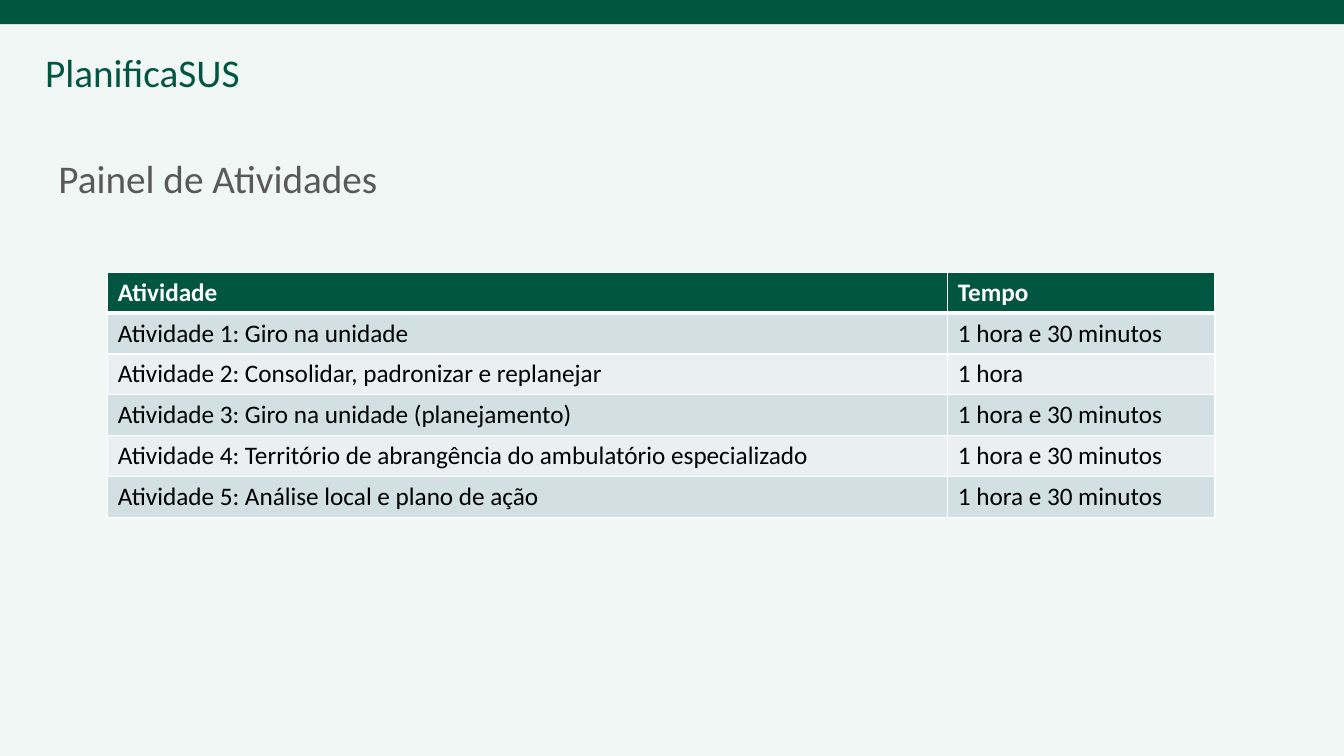
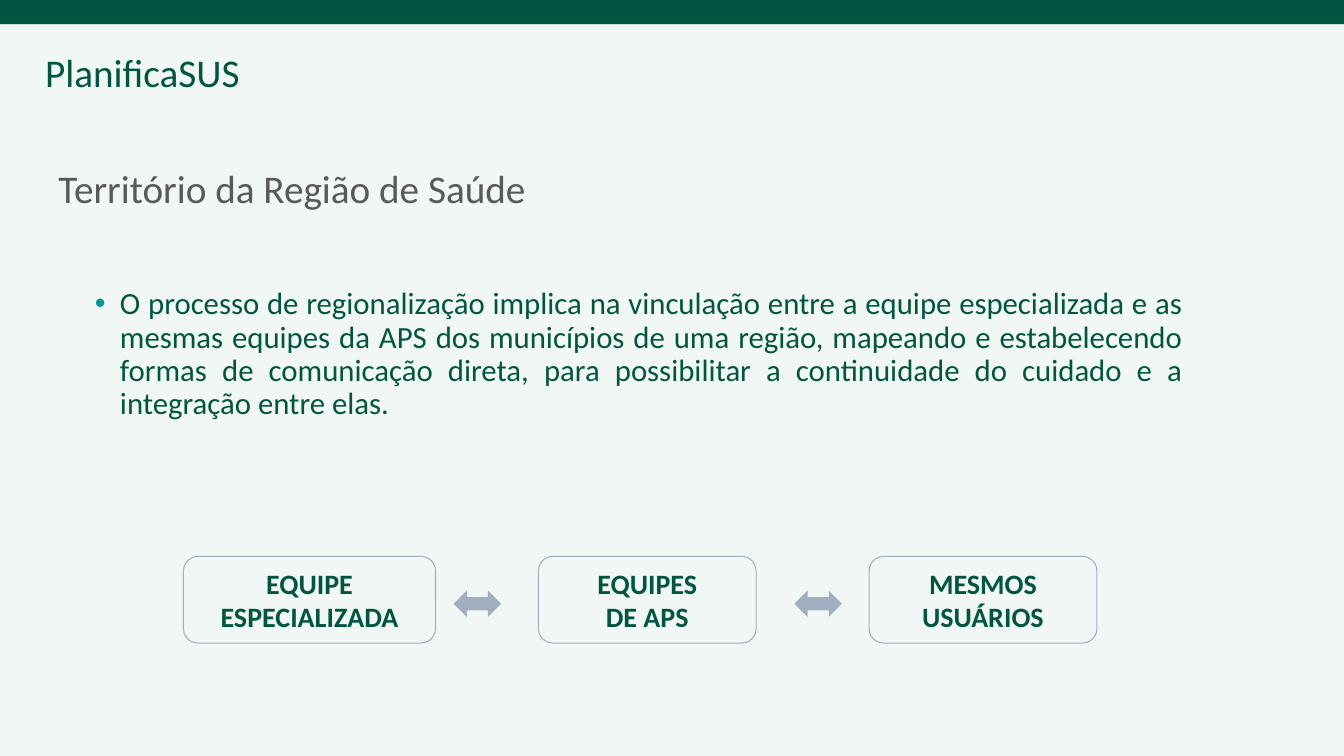
import collections
import dataclasses

import pptx
import pptx.dml.color
import pptx.enum.shapes
import pptx.enum.text
import pptx.oxml
import pptx.oxml.ns
import pptx.util

ALIGN = pptx.enum.text.PP_ALIGN
ANCHOR = pptx.enum.text.MSO_ANCHOR
SHAPE = pptx.enum.shapes.MSO_SHAPE
Box = collections.namedtuple("Box", "left top width height")


@dataclasses.dataclass(frozen=True)
class Theme:
    font: str = "Calibri"
    green: str = "015641"
    grey: str = "595959"
    teal: str = "009999"
    slate: str = "A0AEC0"
    white: str = "FFFFFF"
    black: str = "000000"
    background: str = "F1F7F4"
    row_dark: str = "D2E0E3"
    row_light: str = "EAF0F2"
    title_size: int = 28
    body_size: int = 22
    box_size: int = 20
    table_size: int = 18


THEME = Theme()
SLIDE = Box(0, 0, 13.33, 7.5)


# Helpers
def rgb(value):
    return pptx.dml.color.RGBColor.from_string(value)


def inches(box):
    return [pptx.util.Inches(length) for length in box]


def apply(target, **values):
    for name, value in values.items():
        setattr(target, name, value)


def paint(fill, color):
    fill.solid()
    fill.fore_color.rgb = rgb(color)


def write(paragraph, text, size, color, bold=False, **layout):
    apply(paragraph, **layout)
    run = paragraph.add_run()
    run.text = text
    apply(run.font, name=THEME.font, size=pptx.util.Pt(size), bold=bold)
    run.font.color.rgb = rgb(color)


def place(shape, box):
    apply(shape, **dict(zip(Box._fields, inches(box))))


def add_plain_shape(slide, kind, box, fill=None, line=None):
    shape = slide.shapes.add_shape(kind, *inches(box))
    shape.shadow.inherit = False
    if fill:
        paint(shape.fill, fill)
    else:
        shape.fill.background()
    if line:
        shape.line.color.rgb = rgb(line)
        shape.line.width = pptx.util.Pt(0.75)
    else:
        shape.line.fill.background()
    return shape


# Shared background, band and programme name, kept on the master
def build_master(deck, slide):
    master = deck.slide_master
    paint(master.background.fill, THEME.background)
    band = add_plain_shape(slide, SHAPE.RECTANGLE,
                           Box(SLIDE.left, SLIDE.top, SLIDE.width, 0.24), THEME.green)
    programme = slide.shapes.add_textbox(*inches(Box(0.35, 0.43, 2.15, 0.57)))
    programme.text_frame.word_wrap = False
    write(programme.text_frame.paragraphs[0], "PlanificaSUS", THEME.title_size, THEME.green)
    for number, part in enumerate((band, programme), start=101):
        part._element.nvSpPr.cNvPr.set("id", str(number))
        master.shapes._spTree.append(part._element)


def set_title(slide, text, top, anchor):
    title = slide.shapes.title
    place(title, Box(0.48, top, 10.99, 1.45))
    apply(title.text_frame, vertical_anchor=anchor, word_wrap=True,
          auto_size=pptx.enum.text.MSO_AUTO_SIZE.NONE)
    write(title.text_frame.paragraphs[0], text, THEME.title_size, THEME.grey,
          alignment=ALIGN.LEFT, line_spacing=0.9)


# Activity table
def add_cell_borders(cell, bottom):
    properties = cell._tc.get_or_add_tcPr()
    for side, width in (("L", 1), ("R", 1), ("T", 1), ("B", bottom)):
        properties.append(pptx.oxml.parse_xml(
            f'<a:ln{side} {pptx.oxml.ns.nsdecls("a")} w="{pptx.util.Pt(width)}">'
            f'<a:solidFill><a:srgbClr val="{THEME.white}"/></a:solidFill></a:ln{side}>'))


def add_schedule(slide, box, rows):
    table = slide.shapes.add_table(len(rows), 2, *inches(box)).table
    time_width = 2.65
    for column, width in zip(table.columns, (box.width - time_width, time_width)):
        column.width = pptx.util.Inches(width)
    for index, values in enumerate(rows):
        header = index == 0
        stripe = THEME.row_dark if index % 2 else THEME.row_light
        for cell, text in zip(table.rows[index].cells, values):
            add_cell_borders(cell, 3 if header else 1)
            paint(cell.fill, THEME.green if header else stripe)
            write(cell.text_frame.paragraphs[0], text, THEME.table_size,
                  THEME.white if header else THEME.black, bold=header)


# Bulleted explanation
def set_explanation(slide, box, text):
    body = slide.placeholders[1]
    place(body, box)
    body.text_frame.auto_size = pptx.enum.text.MSO_AUTO_SIZE.NONE
    paragraph = body.text_frame.paragraphs[0]
    properties = paragraph._p.get_or_add_pPr()
    indent = pptx.util.Inches(0.25)
    properties.set("marL", str(indent))
    properties.set("indent", str(-indent))
    for bullet in (f'<a:buClr {{}}><a:srgbClr val="{THEME.teal}"/></a:buClr>',
                   '<a:buFont {} typeface="Arial"/>', '<a:buChar {} char="•"/>'):
        properties.append(pptx.oxml.parse_xml(bullet.format(pptx.oxml.ns.nsdecls("a"))))
    write(paragraph, text, THEME.body_size, THEME.green, alignment=ALIGN.JUSTIFY,
          line_spacing=0.9, space_before=pptx.util.Pt(0))


# Teams joined by two-way arrows
def add_team_flow(slide, box, teams, arrow_offsets):
    for offset, width, lines in teams:
        team = add_plain_shape(slide, SHAPE.ROUNDED_RECTANGLE,
                               Box(box.left + offset, box.top, width, box.height),
                               line=THEME.slate)
        frame = team.text_frame
        apply(frame, word_wrap=True, vertical_anchor=ANCHOR.MIDDLE)
        for index, line in enumerate(lines):
            paragraph = frame.add_paragraph() if index else frame.paragraphs[0]
            write(paragraph, line, THEME.box_size, THEME.green, bold=True,
                  alignment=ALIGN.CENTER)
    arrow_width, arrow_height = 0.47, 0.26
    arrow_top = box.top + (box.height - arrow_height) / 2 + 0.04
    for offset in arrow_offsets:
        add_plain_shape(slide, SHAPE.LEFT_RIGHT_ARROW,
                        Box(box.left + offset, arrow_top, arrow_width, arrow_height),
                        THEME.slate)


# Slides
def build_activities(slide):
    set_title(slide, "Painel de Atividades", 1.07, ANCHOR.MIDDLE)
    long_time = "1 hora e 30 minutos"
    add_schedule(slide, Box(1.07, 2.7, 10.98, 2.4), [
        ("Atividade", "Tempo"),
        ("Atividade 1: Giro na unidade", long_time),
        ("Atividade 2: Consolidar, padronizar e replanejar", "1 hora"),
        ("Atividade 3: Giro na unidade (planejamento)", long_time),
        ("Atividade 4: Território de abrangência do ambulatório especializado", long_time),
        ("Atividade 5: Análise local e plano de ação", long_time),
    ])


def build_territory(slide):
    set_title(slide, "Território da Região de Saúde", 1.63, ANCHOR.TOP)
    set_explanation(slide, Box(0.84, 2.81, 10.99, 3.99), (
        "O processo de regionalização implica na vinculação entre a equipe especializada "
        "e as mesmas equipes da APS dos municípios de uma região, mapeando e estabelecendo "
        "formas de comunicação direta, para possibilitar a continuidade do cuidado e a "
        "integração entre elas."))
    add_team_flow(slide, Box(1.82, 5.52, 9.06, 0.86), [
        (0, 2.5, ["EQUIPE ESPECIALIZADA"]),
        (3.52, 2.16, ["EQUIPES", "DE APS"]),
        (6.8, 2.26, ["MESMOS", "USUÁRIOS"]),
    ], arrow_offsets=(2.68, 6.06))


def main():
    deck = pptx.Presentation()
    deck.slide_width, deck.slide_height = inches((SLIDE.width, SLIDE.height))
    title_only, title_and_content = deck.slide_layouts[5], deck.slide_layouts[1]
    activities = deck.slides.add_slide(title_only)
    build_master(deck, activities)
    build_activities(activities)
    build_territory(deck.slides.add_slide(title_and_content))
    deck.save("out.pptx")


if __name__ == "__main__":
    main()
